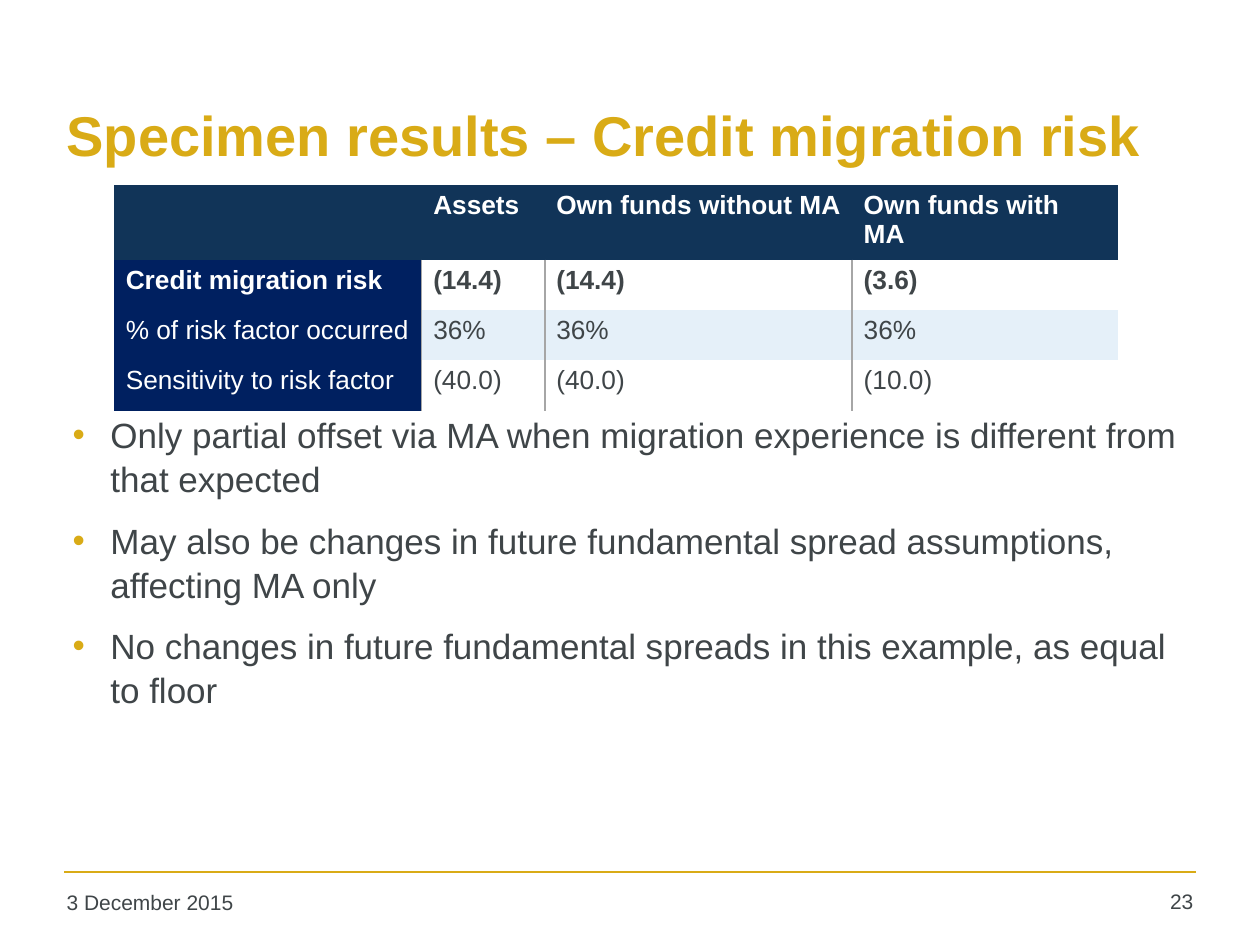
from lxml import etree
from pptx import Presentation
from pptx.dml.color import RGBColor
from pptx.enum.shapes import MSO_CONNECTOR
from pptx.enum.text import MSO_ANCHOR, PP_ALIGN
from pptx.oxml.ns import qn
from pptx.util import Pt

STRAIGHT = MSO_CONNECTOR.STRAIGHT
TOP, MIDDLE = MSO_ANCHOR.TOP, MSO_ANCHOR.MIDDLE
LEFT, RIGHT = PP_ALIGN.LEFT, PP_ALIGN.RIGHT

GOLD = RGBColor(0xD9, 0xAB, 0x16)
SLATE = RGBColor(0x3F, 0x45, 0x48)
WHITE = RGBColor(0xFF, 0xFF, 0xFF)
HEADER_BLUE = RGBColor(0x11, 0x34, 0x58)
LABEL_BLUE = RGBColor(0x00, 0x20, 0x60)
BAND_BLUE = RGBColor(0xE5, 0xF0, 0xF9)
GREY = RGBColor(0xA6, 0xA6, 0xA6)

FONT = "Arial"
COLUMN_WIDTHS = (175.7, 70.3, 175.7, 152.1)
ROW_HEIGHT = 28.8
RESULTS = (
    ("", "Assets", "Own funds without MA", "Own funds with MA"),
    ("Credit migration risk", "(14.4)", "(14.4)", "(3.6)"),
    ("% of risk factor occurred", "36%", "36%", "36%"),
    ("Sensitivity to risk factor", "(40.0)", "(40.0)", "(10.0)"),
)
FINDINGS = (
    "Only partial offset via MA when migration experience is different from that expected",
    "May also be changes in future fundamental spread assumptions, affecting MA only",
    "No changes in future fundamental spreads in this example, as equal to floor",
)


def set_font(paragraph, size, color, bold=False):
    font = paragraph.font
    font.name = FONT
    font.size = Pt(size)
    font.bold = bold
    font.color.rgb = color


def add_text_box(slide, left, top, width, height, anchor=TOP):
    shape = slide.shapes.add_textbox(Pt(left), Pt(top), Pt(width), Pt(height))
    shape.text_frame.word_wrap = True
    shape.text_frame.vertical_anchor = anchor
    return shape.text_frame


def add_label(slide, text, box, size, color, bold=False, alignment=LEFT, anchor=TOP):
    paragraph = add_text_box(slide, *box, anchor=anchor).paragraphs[0]
    paragraph.text = text
    paragraph.alignment = alignment
    set_font(paragraph, size, color, bold)


def add_rule(slide, left, right, y):
    line = slide.shapes.add_connector(STRAIGHT, Pt(left), Pt(y), Pt(right), Pt(y))
    line.line.color.rgb = GOLD
    line.line.width = Pt(1)
    etree.SubElement(line._element.spPr, qn("a:effectLst"))


def set_borders(cell, visible_sides):
    properties = cell._tc.get_or_add_tcPr()
    for index, side in enumerate(("lnL", "lnR", "lnT", "lnB")):
        border = etree.Element(qn("a:" + side), w=str(Pt(1)))
        if side in visible_sides:
            fill = etree.SubElement(border, qn("a:solidFill"))
            etree.SubElement(fill, qn("a:srgbClr"), val=str(GREY))
        else:
            etree.SubElement(border, qn("a:noFill"))
        properties.insert(index, border)


def cell_style(row, column):
    if row == 0:
        return HEADER_BLUE, WHITE, ()
    if column == 0:
        return LABEL_BLUE, WHITE, ("lnR",)
    fill = BAND_BLUE if row == 2 else WHITE
    sides = ("lnL",) if column == len(COLUMN_WIDTHS) - 1 else ("lnL", "lnR")
    return fill, SLATE, sides


def add_results_table(slide, left, top):
    table = slide.shapes.add_table(
        len(RESULTS), len(COLUMN_WIDTHS), Pt(left), Pt(top),
        Pt(sum(COLUMN_WIDTHS)), Pt(ROW_HEIGHT * len(RESULTS)),
    ).table
    for column, width in zip(table.columns, COLUMN_WIDTHS):
        column.width = Pt(width)
    for row_index, values in enumerate(RESULTS):
        table.rows[row_index].height = Pt(ROW_HEIGHT)
        for column_index, value in enumerate(values):
            cell = table.cell(row_index, column_index)
            fill, color, sides = cell_style(row_index, column_index)
            cell.fill.solid()
            cell.fill.fore_color.rgb = fill
            cell.margin_left = cell.margin_right = Pt(6.6)
            cell.margin_top = cell.margin_bottom = Pt(3.3)
            set_borders(cell, sides)
            paragraph = cell.text_frame.paragraphs[0]
            paragraph.text = value
            set_font(paragraph, 15, color, bold=row_index < 2)


def add_bullet(paragraph):
    properties = paragraph._p.get_or_add_pPr()
    properties.set("marL", str(Pt(21.6)))
    properties.set("indent", str(Pt(-21.6)))
    bullet_color = etree.SubElement(properties, qn("a:buClr"))
    etree.SubElement(bullet_color, qn("a:srgbClr"), val=str(GOLD))
    etree.SubElement(properties, qn("a:buFont"), typeface=FONT)
    etree.SubElement(properties, qn("a:buChar"), char="•")


def add_findings(slide, left, top, width, height):
    frame = add_text_box(slide, left, top, width, height)
    frame.margin_left = frame.margin_right = Pt(6.5)
    frame.margin_top = frame.margin_bottom = Pt(3)
    for index, finding in enumerate(FINDINGS):
        paragraph = frame.add_paragraph() if index else frame.paragraphs[0]
        paragraph.text = finding
        add_bullet(paragraph)
        paragraph.line_spacing = 1.05
        if index:
            paragraph.space_before = Pt(10)
        set_font(paragraph, 20, SLATE)


def main():
    presentation = Presentation()
    presentation.slide_width = Pt(720)
    presentation.slide_height = Pt(540)
    slide = presentation.slides.add_slide(presentation.slide_layouts[6])

    add_rule(slide, 36.7, 683.3, 498.2)
    add_label(slide, "Specimen results – Credit migration risk", (31, 31.7, 653, 90),
              32, GOLD, bold=True, anchor=MIDDLE)
    add_label(slide, "3 December 2015", (31, 504.7, 158.4, 26), 12, SLATE)
    add_label(slide, "23", (638, 504, 51, 26.6), 12, SLATE, alignment=RIGHT)
    add_results_table(slide, 65.3, 105.8)
    add_findings(slide, 35, 232, 653, 122.4)

    presentation.save("out.pptx")


if __name__ == "__main__":
    main()
